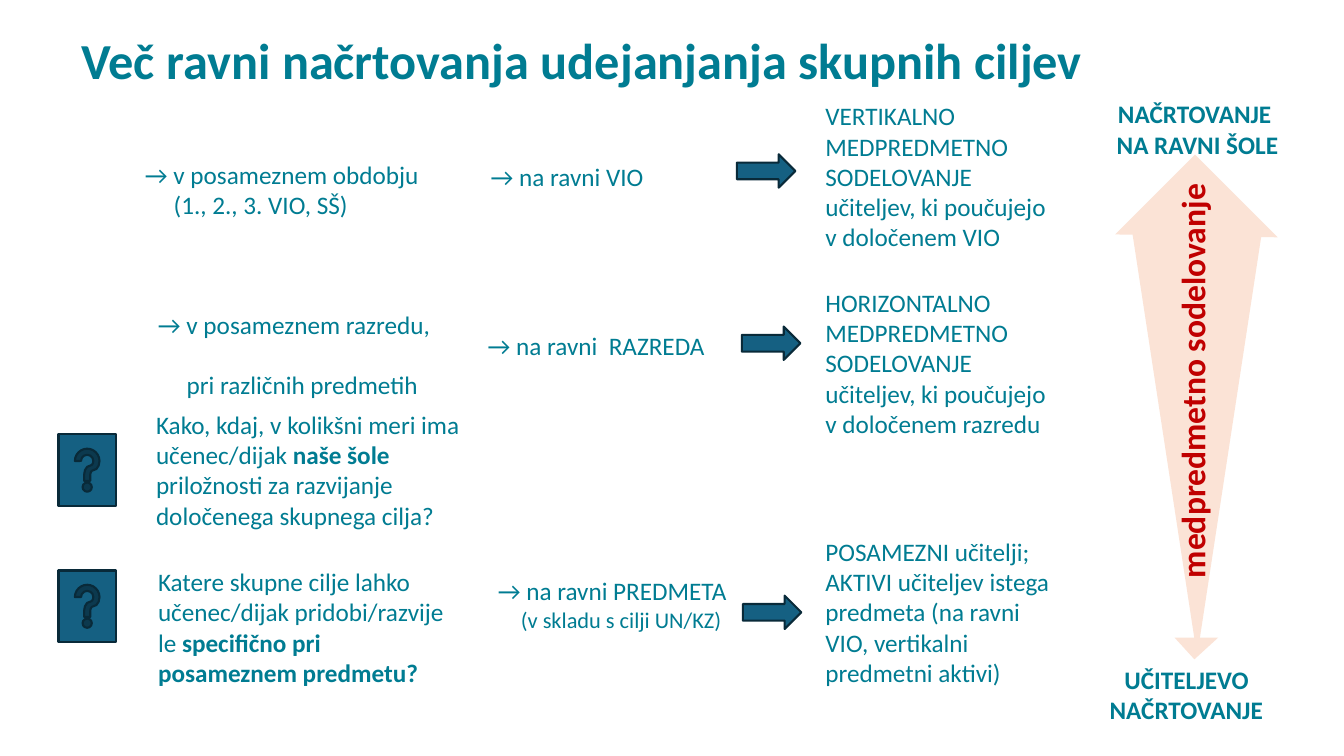
from lxml import etree
from pptx import Presentation
from pptx.dml.color import RGBColor
from pptx.enum.shapes import MSO_SHAPE
from pptx.enum.text import PP_ALIGN
from pptx.oxml import parse_xml
from pptx.oxml.ns import nsdecls
from pptx.util import Pt

TEAL = RGBColor(0x00, 0x7C, 0x92)
RED = RGBColor(0xC0, 0x00, 0x00)
BLUE = RGBColor(0x15, 0x60, 0x82)
NAVY = RGBColor(0x09, 0x2A, 0x39)
PEACH = RGBColor(0xFB, 0xE3, 0xD6)
CENTER = PP_ALIGN.CENTER
TRIANGLE = MSO_SHAPE.ISOSCELES_TRIANGLE
RIGHT_TRIANGLE = MSO_SHAPE.RIGHT_TRIANGLE
RIGHT_ARROW = MSO_SHAPE.RIGHT_ARROW
HELP_BUTTON = MSO_SHAPE.ACTION_BUTTON_HELP

presentation = Presentation()
presentation.slide_width = Pt(960)
presentation.slide_height = Pt(540)
slide = presentation.slides.add_slide(presentation.slide_layouts[6])


def add_filled_shape(kind, left, top, width, height, fill, line=None, rotation=0):
    shape = slide.shapes.add_shape(kind, Pt(left), Pt(top), Pt(width), Pt(height))
    shape.shadow.inherit = False
    shape.rotation = rotation
    shape.fill.solid()
    shape.fill.fore_color.rgb = fill
    if line is None:
        shape.line.fill.background()
    else:
        shape.line.color.rgb = line
        shape.line.width = Pt(1.5)


def add_text(lines, left, top, width, height, size=18, color=TEAL):
    """Add one paragraph per line; text between asterisks is bold."""
    box = slide.shapes.add_textbox(Pt(left), Pt(top), Pt(width), Pt(height))
    box.text_frame.word_wrap = True
    for index, line in enumerate(lines):
        if index:
            paragraph = box.text_frame.add_paragraph()
        else:
            paragraph = box.text_frame.paragraphs[0]
        for part, text in enumerate(line.split("*")):
            if text:
                run = paragraph.add_run()
                run.text = text
                run.font.name = "Calibri"
                run.font.size = Pt(size)
                run.font.bold = part % 2 == 1
                run.font.color.rgb = color
    return box


# Double-headed planning arrow
add_filled_shape(TRIANGLE, 808.6, 164.9, 92.9, 303.8, PEACH, rotation=180)
add_filled_shape(RIGHT_TRIANGLE, 843.1, 445, 23, 20.9, PEACH, rotation=317.6)
add_filled_shape(RIGHT_TRIANGLE, 814.3, 126.7, 80.6, 83.5, PEACH, rotation=135)

collaboration = add_text(["*medpredmetno sodelovanje*"], 673.9, 254.2, 355, 36, 24, RED)
collaboration.rotation = 270
collaboration_paragraph = collaboration.text_frame.paragraphs[0]
collaboration_paragraph.alignment = CENTER
outline = parse_xml(f'<a:ln {nsdecls("a")} w="9525"/>')
outline_fill = etree.SubElement(outline, "{%s}solidFill" % outline.nsmap["a"])
etree.SubElement(outline_fill, "{%s}srgbClr" % outline.nsmap["a"], val="FFFFFF")
collaboration_paragraph.runs[0].font._element.insert(0, outline)

school_level = add_text(["*NAČRTOVANJE *", "*NA RAVNI ŠOLE*"], 785.5, 67, 139.7, 51)
for paragraph in school_level.text_frame.paragraphs:
    paragraph.alignment = CENTER
teacher_level = add_text(["*UČITELJEVO *", "*NAČRTOVANJE*"], 785.5, 470.9, 128.2, 51)
teacher_level.text_frame.paragraphs[0].alignment = CENTER

# Title
add_text(["*Več ravni načrtovanja udejanjanja skupnih ciljev*"], 51.1, 17.3, 761.8, 51, 36)

# Questions and periods, first column
period = add_text(["→ v posameznem obdobju", "(1., 2., 3. VIO, SŠ)"], 96.5, 110.2, 233.3, 51)
grade = add_text(["→ v posameznem razredu,", "pri različnih predmetih"], 105.8, 217.4, 211.7, 51)
grade.text_frame.paragraphs[1].space_before = Pt(21.5)
add_text(["Kako, kdaj, v kolikšni meri ima učenec/dijak *naše šole *"
          "priložnosti za razvijanje določenega skupnega cilja?"],
         104.4, 288.7, 237.6, 94.3)
add_text(["Katere skupne cilje lahko učenec/dijak pridobi/razvije",
          "le *specifično pri*", "*posameznem predmetu?*"],
         105.8, 401, 260.6, 94.3)
for top in (310.3, 407.5):
    add_filled_shape(HELP_BUTTON, 41.8, top, 41, 51.1, BLUE, NAVY)

# Levels, second column
add_text(["→ na ravni VIO"], 343.4, 111.6, 222.5, 28.8)
add_text(["→ na ravni  RAZREDA"], 341.3, 232.6, 185, 28.8)
subject = add_text(["→ na ravni PREDMETA", "(v skladu s cilji UN/KZ)"], 348.5, 407.5, 193, 51)
subject.text_frame.paragraphs[1].runs[0].font.size = Pt(16)

for box, indent in ((period, 20.5), (grade, 20.5), (subject, 16.5)):
    second_line = box.text_frame.paragraphs[1]
    second_line._p.get_or_add_pPr().set("marL", str(Pt(indent)))

for left, top in ((526.3, 110.2), (529.9, 233.3), (530.6, 425.5)):
    add_filled_shape(RIGHT_ARROW, left, top, 41.8, 23.8, BLUE, NAVY)

# Kinds of collaboration, third column
for direction, scope, top in (("VERTIKALNO", "VIO", 68.4),
                              ("HORIZONTALNO", "razredu", 201.6)):
    add_text([f"{direction} MEDPREDMETNO SODELOVANJE",
              "učiteljev, ki poučujejo", f"v določenem {scope}"],
             582.5, top, 205.9, 116.6)
add_text(["POSAMEZNI učitelji; AKTIVI učiteljev istega predmeta "
          "(na ravni VIO, vertikalni predmetni aktivi)"],
         582.5, 379.4, 181.4, 116.6)

presentation.save("out.pptx")
